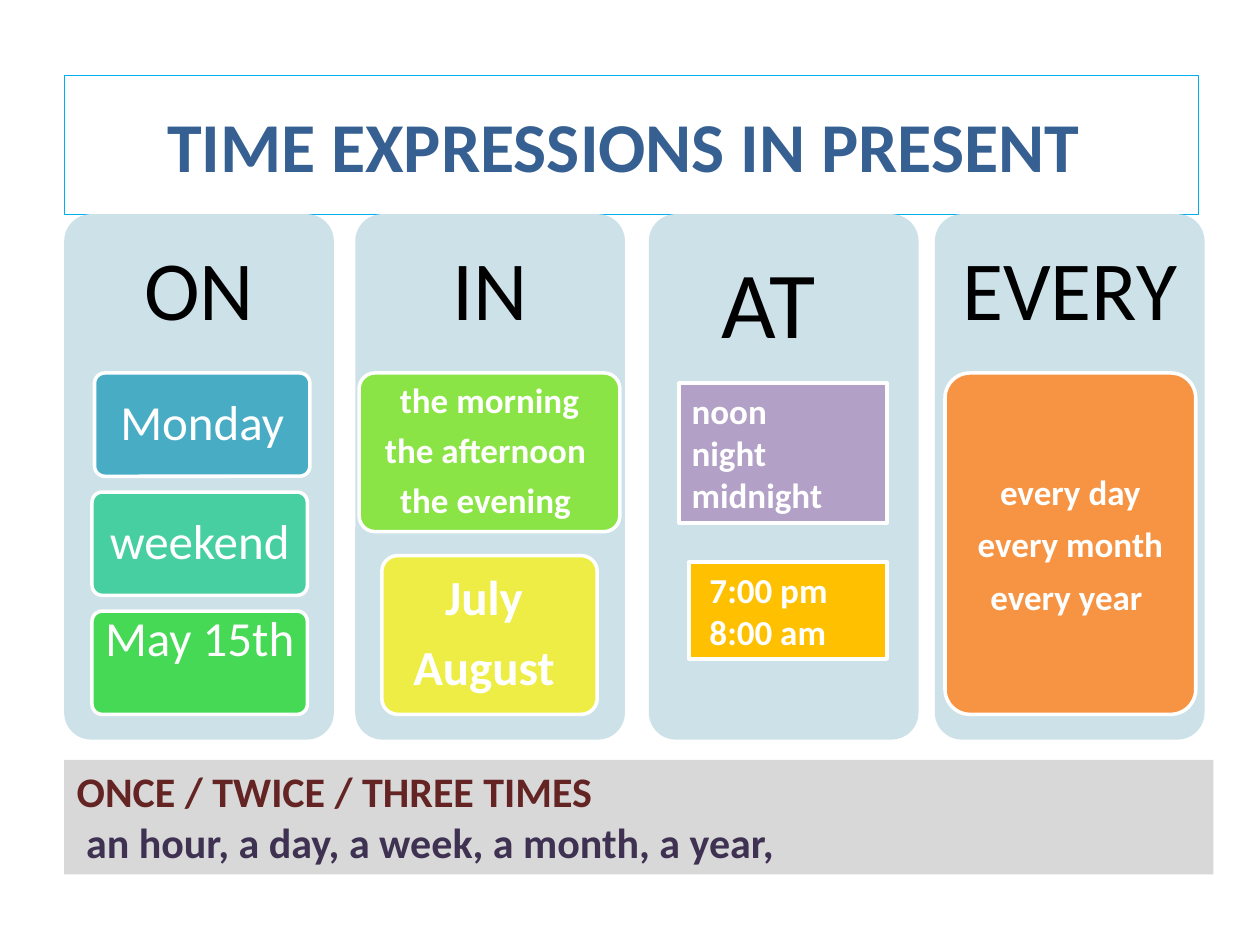
import dataclasses
import typing

import pptx
import pptx.dml.color
import pptx.enum.shapes
import pptx.enum.text
import pptx.util

Inches = pptx.util.Inches
Pt = pptx.util.Pt
RGB = pptx.dml.color.RGBColor
Kind = pptx.enum.shapes.MSO_SHAPE
Align = pptx.enum.text.PP_ALIGN
Anchor = pptx.enum.text.MSO_ANCHOR

WHITE = RGB(0xFF, 0xFF, 0xFF)
BLACK = RGB(0, 0, 0)
NAVY = RGB(0x36, 0x60, 0x92)
SKY = RGB(0x00, 0xB0, 0xF0)
PALE = RGB(0xCD, 0xE1, 0xE8)
TEAL = RGB(0x49, 0xAC, 0xC5)
MINT = RGB(0x47, 0xCF, 0xA2)
GREEN = RGB(0x46, 0xD9, 0x56)
LIME = RGB(0x8B, 0xE4, 0x45)
YELLOW = RGB(0xED, 0xED, 0x45)
ORANGE = RGB(0xF6, 0x94, 0x44)
LILAC = RGB(0xB2, 0xA0, 0xC7)
GOLD = RGB(0xFF, 0xC0, 0x00)
GREY = RGB(0xD8, 0xD8, 0xD8)
WINE = RGB(0x63, 0x24, 0x23)
PLUM = RGB(0x3F, 0x31, 0x51)

EDGE = 0.51
TOP = 1.7
WIDE = 2.14
ROW = 2.96
STEP = 0.945
PLAIN = (0.1, 0.05)
ROUND = (0.08, 0.06)
TIGHT = (0.06, 0.04)


@dataclasses.dataclass
class Card:
    text: str
    left: float
    top: float
    width: float
    height: float
    fill: RGB
    kind: typing.Any = Kind.ROUNDED_RECTANGLE
    border: float = 2
    style: dict = dataclasses.field(default_factory=dict)


@dataclasses.dataclass
class Column:
    left: float
    head: str
    cards: list[Card]
    box: tuple = (0, TOP, WIDE, 1.25)
    style: dict = dataclasses.field(
        default_factory=lambda: dict(size=48, pad=(0.2, 0.2), space=0.9))


def write(shape, text: str, *, size=20, color=WHITE, bold=False, align=Align.CENTER,
          anchor=Anchor.MIDDLE, pad=PLAIN, space=1.0, gap=0) -> None:
    """Fill a shape with one paragraph per line of text."""
    frame = shape.text_frame
    frame.text = text
    frame.word_wrap = True
    frame.vertical_anchor = anchor
    frame.margin_left = frame.margin_right = Inches(pad[0])
    frame.margin_top = frame.margin_bottom = Inches(pad[1])
    for i, para in enumerate(frame.paragraphs):
        para.alignment = align
        para.line_spacing = space
        para.space_before = Pt(gap if i else 0)
        for run in para.runs:
            font = run.font
            font.name, font.size, font.bold = "Calibri", Pt(size), bold
            font.color.rgb = color


def block(slide, kind, box: tuple, fill: RGB, border: float = 0):
    shape = slide.shapes.add_shape(kind, *map(Inches, box))
    shape.shadow.inherit = False
    shape.fill.solid()
    shape.fill.fore_color.rgb = fill
    if kind == Kind.ROUNDED_RECTANGLE:
        shape.adjustments[0] = 0.1
    if border:
        shape.line.color.rgb = WHITE
        shape.line.width = Pt(border)
    else:
        shape.line.fill.background()
    return shape


def draw(slide, col: Column) -> None:
    block(slide, Kind.ROUNDED_RECTANGLE, (col.left, TOP, WIDE, 4.17), PALE)
    left, top, width, height = col.box
    head = slide.shapes.add_textbox(
        *map(Inches, (col.left + left, top, width, height)))
    write(head, col.head, color=BLACK, **col.style)
    for card in col.cards:
        box = (card.left, card.top, card.width, card.height)
        shape = block(slide, card.kind, box, card.fill, card.border)
        write(shape, card.text, **card.style)


def main() -> None:
    deck = pptx.Presentation()
    deck.slide_width, deck.slide_height = Inches(10), Inches(7.5)
    slide = deck.slides.add_slide(deck.slide_layouts[5])

    title = slide.shapes.title
    title.left, title.top = Inches(EDGE), Inches(0.6)
    title.width, title.height = Inches(9), Inches(1.1)
    title.line.color.rgb = SKY
    title.line.width = Pt(0.75)
    write(title, "TIME EXPRESSIONS IN PRESENT ", size=40, color=NAVY, bold=True)

    day = dict(size=28, pad=ROUND, space=0.9)
    date = dict(size=28, pad=(0.06, 0), space=0.9, anchor=Anchor.TOP)
    part = dict(bold=True, pad=TIGHT, space=0.9, gap=7)
    month = dict(size=28, bold=True, pad=ROUND, space=0.9, gap=9.8)
    every = dict(bold=True, pad=TIGHT, gap=6)
    clock = dict(bold=True, align=Align.LEFT, anchor=Anchor.TOP)
    square = dict(kind=Kind.RECTANGLE, border=2.25, style=clock)

    columns = [
        Column(EDGE, "ON", [
            Card("Monday", 0.75, ROW, 1.71, 0.82, TEAL, style=day),
            Card("weekend", 0.73, ROW + STEP, 1.71, 0.82, MINT, style=day),
            Card("May 15th", 0.73, ROW + 2 * STEP, 1.71, 0.82, GREEN, style=date)]),
        Column(2.82, "IN", [
            Card("the morning\nthe afternoon \nthe evening ",
                 2.85, ROW, 2.07, 1.26, LIME, style=part),
            Card("July \nAugust ", 3.03, 4.41, 1.71, 1.26, YELLOW, style=month)]),
        Column(5.15, "AT ", [
            Card("noon\nnight\nmidnight", 5.39, 3.04, 1.65, 1.11, LILAC, **square),
            Card(" 7:00 pm\n 8:00 am", 5.47, 4.46, 1.57, 0.77, GOLD, **square)],
            box=(0.4, 1.89, 1.1, 1.01), style=dict(size=54, anchor=Anchor.TOP)),
        Column(7.42, "EVERY", [
            Card("every day\nevery month\nevery year ",
                 7.5, ROW, 1.99, 2.71, ORANGE, style=every)]),
    ]
    for col in columns:
        draw(slide, col)

    foot = block(slide, Kind.RECTANGLE, (EDGE, 6.03, 9.12, 0.91), GREY)
    write(foot, "ONCE / TWICE / THREE TIMES\n an hour, a day, a week, a month, a year,",
          size=24, color=WINE, bold=True, align=Align.LEFT, anchor=Anchor.TOP)
    foot.text_frame.paragraphs[1].runs[0].font.color.rgb = PLUM

    deck.save("out.pptx")


if __name__ == "__main__":
    main()
